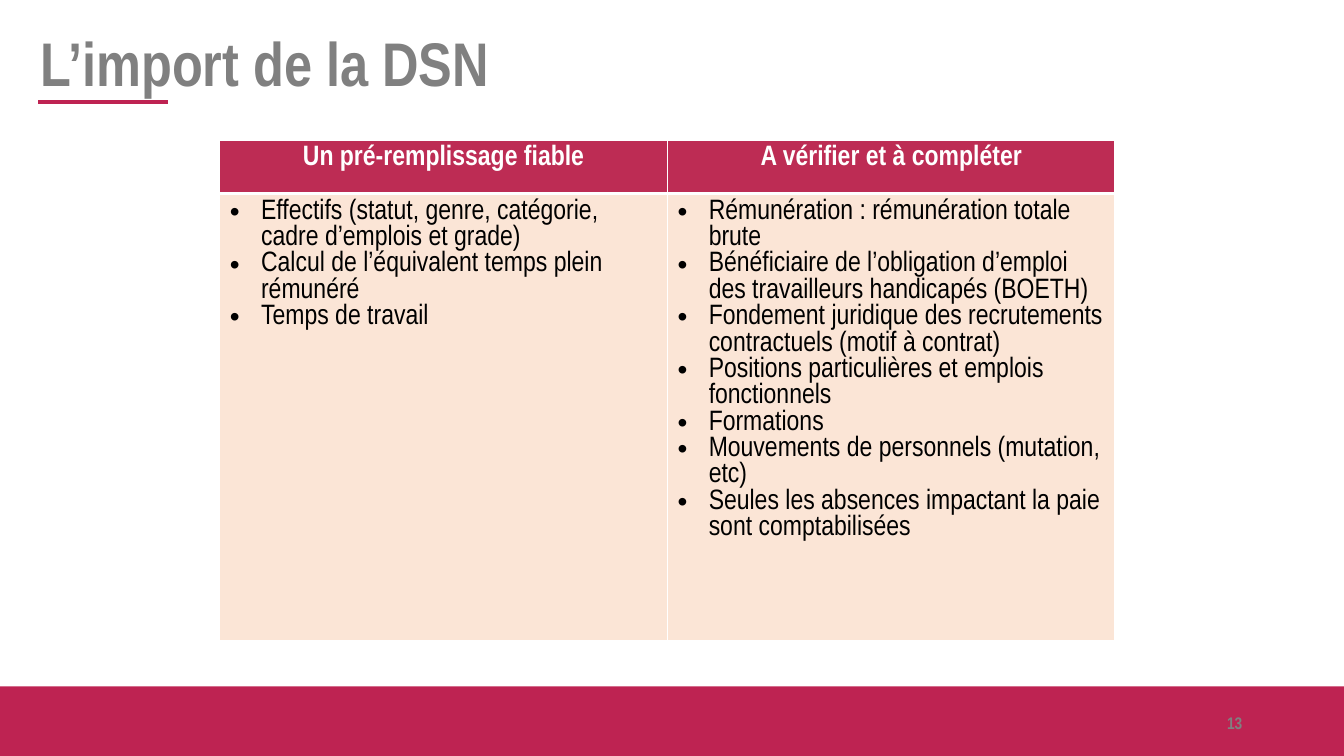
from lxml import etree
from pptx import Presentation
from pptx.dml.color import RGBColor
from pptx.enum import shapes, text
from pptx.oxml import ns
from pptx.util import Inches, Pt

TITLE = "L’import de la DSN"
PAGE = "13"
COLUMNS = [
    ("Un pré-remplissage fiable", [
        "Effectifs (statut, genre, catégorie, cadre d’emplois et grade)",
        "Calcul de l’équivalent temps plein rémunéré",
        "Temps de travail",
    ]),
    ("A vérifier et à compléter", [
        "Rémunération : rémunération totale brute",
        "Bénéficiaire de l’obligation d’emploi des travailleurs handicapés (BOETH)",
        "Fondement juridique des recrutements contractuels (motif à contrat)",
        "Positions particulières et emplois fonctionnels",
        "Formations",
        "Mouvements de personnels (mutation, etc)",
        "Seules les absences impactant la paie sont comptabilisées",
    ]),
]
COLORS = {"band": "BE2352", "header": "BD2C54", "body": "FBE5D6",
          "gray": "808080", "white": "FFFFFF", "black": "000000"}
FONT = "Arial Narrow"
SLIDE_W, SLIDE_H = 13.33, 7.5
BAND_TOP = 6.81
TABLE_LEFT, TABLE_TOP, COLUMN_W = 2.18, 1.39, 4.44
ROW_HEIGHTS = [0.53, 4.19]
INDENT = 0.31


def rgb(name):
    return RGBColor.from_string(COLORS[name])


def add_run(paragraph, words, size, color, bold=False):
    run = paragraph.add_run()
    run.text = words
    run.font.name, run.font.size, run.font.bold = FONT, Pt(size), bold
    run.font.color.rgb = rgb(color)
    ending = etree.SubElement(paragraph._p, ns.qn("a:endParaRPr"), sz=str(size * 100))
    etree.SubElement(ending, ns.qn("a:latin"), typeface=FONT)


def add_label(slide, box, words, size):
    label = slide.shapes.add_textbox(*map(Inches, box)).text_frame
    label.word_wrap = True
    add_run(label.paragraphs[0], words, size, "gray", bold=True)
    return label


def add_bullet(paragraph):
    props = paragraph._p.get_or_add_pPr()
    props.set("marL", str(Inches(INDENT)))
    props.set("indent", str(-Inches(INDENT)))
    etree.SubElement(props, ns.qn("a:buFont")).set("typeface", "Arial")
    etree.SubElement(props, ns.qn("a:buChar")).set("char", "•")


def paint_cell(cell, fill, bottom):
    props = cell._tc.get_or_add_tcPr()
    for side, width in (("L", 1), ("R", 1), ("T", 1), ("B", bottom)):
        line = etree.SubElement(props, ns.qn(f"a:ln{side}"), w=str(Pt(width)))
        solid = etree.SubElement(line, ns.qn("a:solidFill"))
        etree.SubElement(solid, ns.qn("a:srgbClr"), val=COLORS["white"])
    cell.fill.solid()
    cell.fill.fore_color.rgb = rgb(fill)


def add_comparison(slide):
    table = slide.shapes.add_table(
        len(ROW_HEIGHTS), len(COLUMNS), Inches(TABLE_LEFT), Inches(TABLE_TOP),
        Inches(COLUMN_W * len(COLUMNS)), Inches(sum(ROW_HEIGHTS))).table
    for row, height in zip(table.rows, ROW_HEIGHTS):
        row.height = Inches(height)
    for index, (heading, points) in enumerate(COLUMNS):
        table.columns[index].width = Inches(COLUMN_W)
        header, body = table.cell(0, index), table.cell(1, index)
        paint_cell(header, "header", 3)
        paint_cell(body, "body", 1)
        heading_line = header.text_frame.paragraphs[0]
        heading_line.alignment = text.PP_ALIGN.CENTER
        add_run(heading_line, heading, 20, "white", bold=True)
        for number, point in enumerate(points):
            frame = body.text_frame
            paragraph = frame.add_paragraph() if number else frame.paragraphs[0]
            add_bullet(paragraph)
            add_run(paragraph, point, 20, "black")


def main():
    """Build the slide on importing the DSN."""
    deck = Presentation()
    deck.slide_width, deck.slide_height = Inches(SLIDE_W), Inches(SLIDE_H)
    slide = deck.slides.add_slide(deck.slide_layouts[6])

    band = slide.shapes.add_shape(
        shapes.MSO_SHAPE.RECTANGLE, 0, Inches(BAND_TOP),
        Inches(SLIDE_W), Inches(SLIDE_H - BAND_TOP))
    band.shadow.inherit = False
    band.fill.solid()
    band.fill.fore_color.rgb = rgb("band")
    band.line.fill.background()

    title = add_label(slide, (0.3, 0.28, 12.64, 0.82), TITLE, 44)
    title.paragraphs[0].line_spacing = 0.9

    add_comparison(slide)

    underline = slide.shapes.add_connector(
        shapes.MSO_CONNECTOR.STRAIGHT,
        Inches(0.38), Inches(1.01), Inches(1.67), Inches(1.01))
    underline.line.color.rgb = rgb("band")
    underline.line.width = Pt(3)
    etree.SubElement(underline._element.spPr, ns.qn("a:effectLst"))

    page = add_label(slide, (9.42, 6.97, 3, 0.4), PAGE, 12)
    page.vertical_anchor = text.MSO_ANCHOR.MIDDLE
    page.paragraphs[0].alignment = text.PP_ALIGN.RIGHT

    deck.save("out.pptx")


if __name__ == "__main__":
    main()
